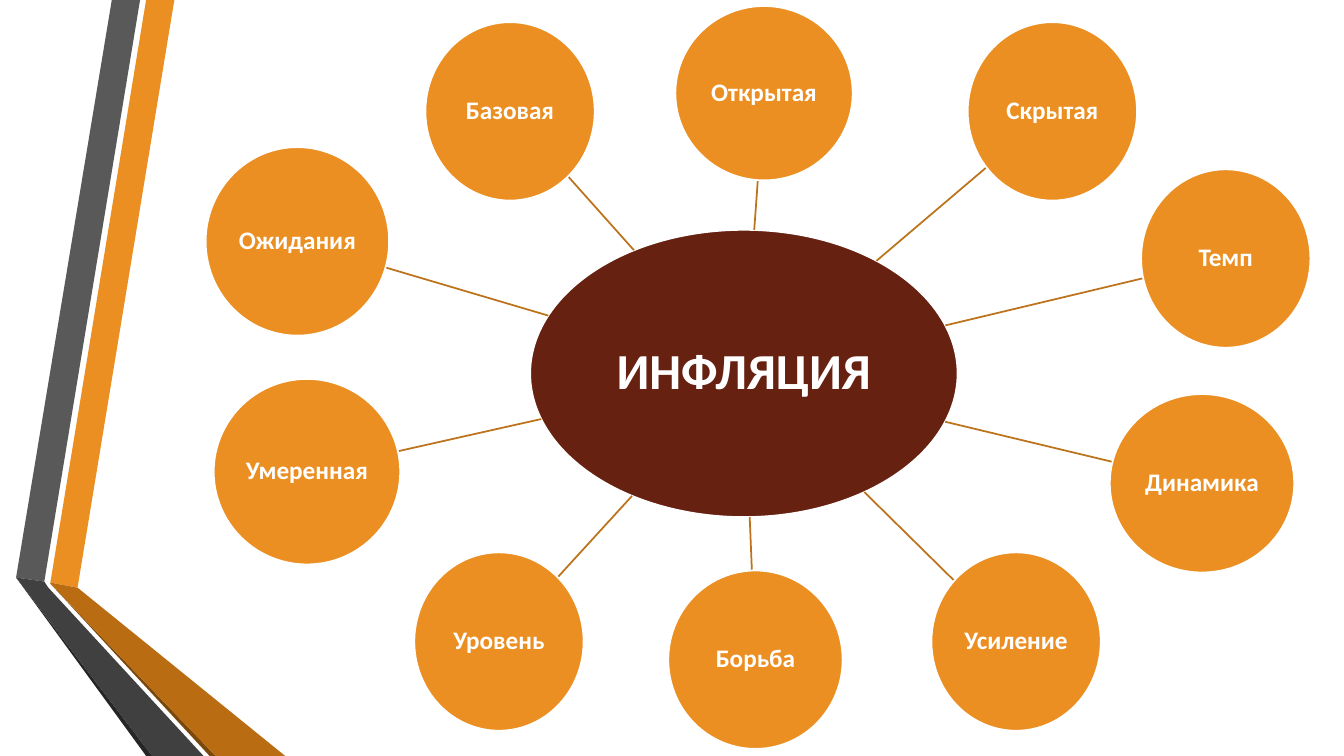
from math import hypot

from lxml import etree
from pptx import Presentation
from pptx import util as u
from pptx.dml.color import RGBColor
from pptx.enum import shapes, text
from pptx.oxml import ns

CELL = u.Inches(0.1)
COLUMNS, ROWS = 133.33, 75

ORANGE, BROWN, SPOKE, WHITE = "EB8F22", "662111", "BC731B", "FFFFFF"

RIBBONS = [
    (ORANGE, [(5, 57.8), (7.7, 58.3), (17.3, 0), (14.5, 0)]),
    ("595959", [(13.9, 0), (11.1, 0), (1.6, 57.3), (4.4, 57.7)]),
    ("262626", [(1.6, 57.3), (14.5, ROWS), (15.1, ROWS)]),
    ("7B480B", [(5, 57.9), (20.8, ROWS), (21.4, ROWS)]),
    ("B96C11", [(5, 57.9), (21.4, ROWS), (28.3, ROWS), (7.7, 58.3), (5, 57.8)]),
    ("404040", [(20.2, ROWS), (4.8, 58.3), (4.4, 57.7), (1.6, 57.3), (15.1, ROWS)]),
]

HUB = (52.6, 22.8, 42.4, 28.5)

TOPICS = [
    ("Открытая", (67, 0.6, 17.6, 17.3)),
    ("Скрытая", (96, 2.2, 16.8, 17.7)),
    ("Темп", (113.2, 16.8, 16.8, 17.7)),
    ("Динамика", (110.1, 39.1, 18.3, 17.7)),
    ("Усиление", (92.4, 54.8, 16.8, 17.7)),
    ("Борьба", (66.3, 56.6, 17.3, 17.7)),
    ("Уровень", (41.1, 54.8, 16.8, 17.7)),
    ("Умеренная", (21.2, 37.6, 18.5, 18.4)),
    ("Ожидания", (20.4, 14.6, 18.2, 18.7)),
    ("Базовая", (42.2, 2.2, 16.8, 17.7)),
]


def cells(*counts):
    """Turn counts of grid cells into lengths."""
    return [u.Emu(round(count * CELL)) for count in counts]


def color(hex_string):
    """Return the colour for a hex string."""
    return RGBColor.from_string(hex_string)


def add_ribbon(slide, fill, points):
    """Draw one filled polygon of the side ribbon."""
    corners = [cells(*point) for point in points]
    builder = slide.shapes.build_freeform(*corners[0])
    builder.add_line_segments(corners[1:], close=True)
    shape = builder.convert_to_shape()
    shape.shadow.inherit = False
    shape.fill.solid()
    shape.fill.fore_color.rgb = color(fill)
    shape.line.fill.background()


def add_bubble(slide, label, box, fill, size, margin):
    """Draw an ellipse with a bold centred label."""
    shape = slide.shapes.add_shape(shapes.MSO_SHAPE.OVAL, *cells(*box))
    shape.shadow.inherit = False
    shape.fill.solid()
    shape.fill.fore_color.rgb = color(fill)
    shape.line.color.rgb = color(WHITE)
    shape.line.width = u.Pt(1.25)
    frame = shape.text_frame
    frame.word_wrap = True
    frame.vertical_anchor = text.MSO_ANCHOR.MIDDLE
    frame.margin_left = frame.margin_right = u.Inches(margin)
    frame.margin_top = frame.margin_bottom = u.Inches(margin)
    paragraph = frame.paragraphs[0]
    paragraph.alignment = text.PP_ALIGN.CENTER
    paragraph.line_spacing = 0.9
    run = paragraph.add_run()
    run.text = label
    run.font.name = "Calibri"
    run.font.size = u.Pt(size)
    run.font.bold = True
    run.font.color.rgb = color(WHITE)


def center(box):
    """Return the middle of a box."""
    left, top, width, height = box
    return left + width / 2, top + height / 2


def edge_toward(box, other):
    """Return where the ellipse in a box meets the line to another box's centre."""
    (x, y), (target_x, target_y) = center(box), center(other)
    run, rise = target_x - x, target_y - y
    share = 1 / hypot(run / (box[2] / 2), rise / (box[3] / 2))
    return x + run * share, y + rise * share


def add_spoke(slide, box):
    """Join the hub to a topic bubble, edge to edge."""
    ends = cells(*edge_toward(HUB, box), *edge_toward(box, HUB))
    connector = slide.shapes.add_connector(shapes.MSO_CONNECTOR.STRAIGHT, *ends)
    connector.line.color.rgb = color(SPOKE)
    connector.line.width = u.Pt(1.25)
    properties = connector.element.find(ns.qn("p:spPr"))
    etree.SubElement(properties, ns.qn("a:effectLst"))


def main():
    """Build the mind map slide and save it."""
    presentation = Presentation()
    presentation.slide_width, presentation.slide_height = cells(COLUMNS, ROWS)
    slide = presentation.slides.add_slide(presentation.slide_layouts[6])
    for fill, points in RIBBONS:
        add_ribbon(slide, fill, points)
    add_bubble(slide, "ИНФЛЯЦИЯ", HUB, BROWN, 36, 0.03)
    for label, box in TOPICS:
        add_spoke(slide, box)
        add_bubble(slide, label, box, ORANGE, 18, 0.01)
    presentation.save("out.pptx")


if __name__ == "__main__":
    main()
